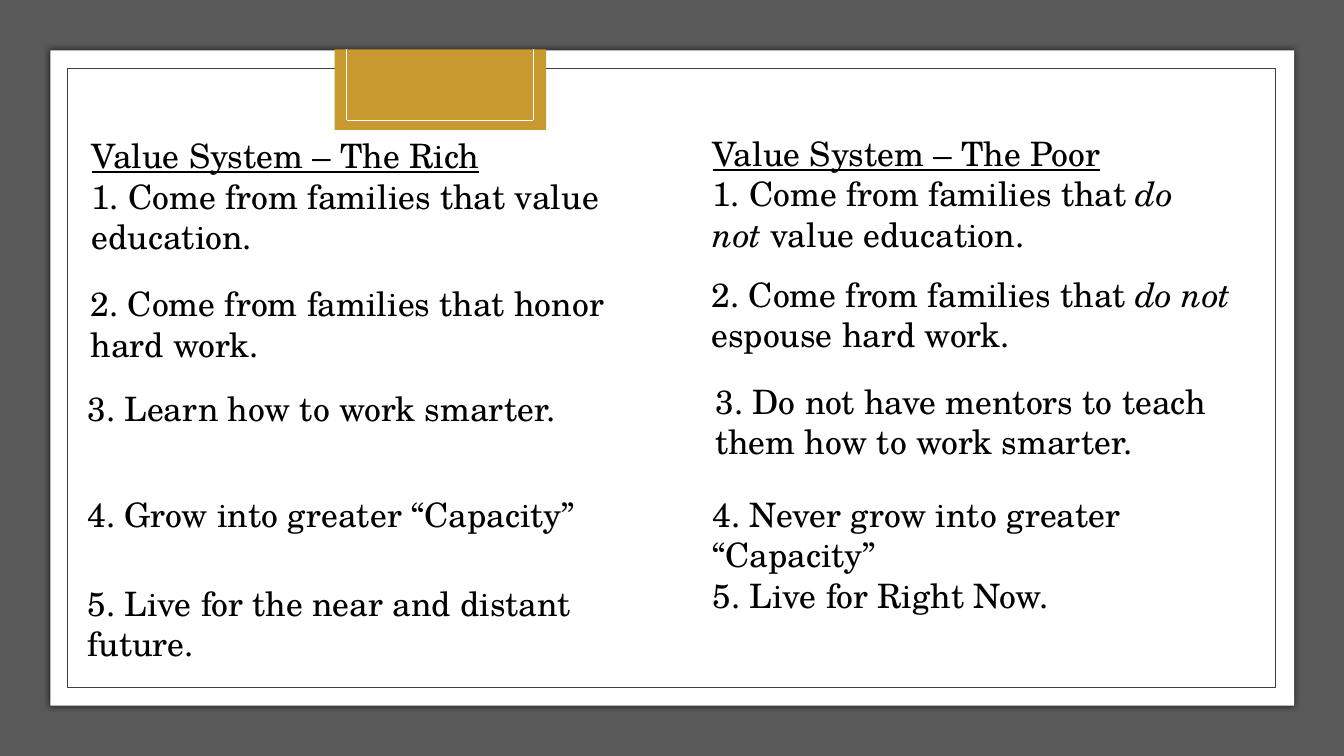
from dataclasses import dataclass

import lxml.etree
import pptx
import pptx.dml.color
import pptx.enum.shapes
import pptx.enum.text
import pptx.oxml
import pptx.oxml.ns
import pptx.slide
import pptx.text.text
import pptx.util

Pt = pptx.util.Pt


@dataclass(frozen=True)
class Theme:
    font: str = "TeX Gyre Schola"
    size: float = 24
    hairline: float = 0.5
    text: str = "000000"
    backdrop: str = "595959"
    paper: str = "FFFFFF"
    frame: str = "404040"
    tab: str = "C7992F"
    shadow: str = "000000"


@dataclass(frozen=True)
class Panel:
    left: float
    top: float
    width: float
    height: float
    fill: str
    line: str | None = None
    glow: bool = False


@dataclass(frozen=True)
class Note:
    left: float
    top: float
    height: float
    text: str
    width: float = 421.9
    heading: str | None = None


THEME = Theme()
TALL, MEDIUM, SHORT = 123.8, 94.3, 65.5

PANELS = [
    Panel(36, 36, 888.5, 468, THEME.paper, glow=True),
    Panel(48.2, 49, 862.6, 442.1, THEME.paper, line=THEME.frame),
    Panel(239, 35.3, 151.2, 57.6, THEME.tab),
]

TAB_LEFT, TAB_RIGHT, TAB_TOP, TAB_BOTTOM = 247.7, 380.9, 35.3, 85.7
TAB_LINES = [
    (TAB_LEFT, TAB_TOP, TAB_LEFT, TAB_BOTTOM),
    (TAB_RIGHT, TAB_TOP, TAB_RIGHT, TAB_BOTTOM),
    (TAB_LEFT, TAB_BOTTOM, TAB_RIGHT, TAB_BOTTOM),
]

OPENINGS = [
    Note(58.3, 92.9, TALL, "1. Come from families that value education.",
         heading="Value System – The Rich"),
    Note(501.8, 91.4, TALL, "1. Come from families that *do not *value education.",
         width=372.2, heading="Value System – The Poor"),
]

NOTES = [
    Note(57.6, 198.7, MEDIUM, "2. Come from families that honor hard work."),
    Note(501.1, 192.2, MEDIUM, "2. Come from families that *do not *espouse hard work."),
    Note(55.4, 273.6, SHORT, "3. Learn how to work smarter."),
    Note(504, 268.6, MEDIUM, "3. Do not have mentors to teach them how to work smarter."),
    Note(55.4, 349.2, SHORT, "4. Grow into greater “Capacity”"),
    Note(501.8, 349.2, SHORT, "4. Never grow into greater “Capacity”"),
    Note(55.4, 412.6, SHORT, "5. Live for the near and distant future."),
    Note(501.8, 406.8, SHORT, "5. Live for Right Now."),
]


def rgb(value: str) -> pptx.dml.color.RGBColor:
    return pptx.dml.color.RGBColor.from_string(value)


def add_glow(sp) -> None:
    ns = pptx.oxml.ns.nsdecls("a")
    effects = pptx.oxml.parse_xml(
        f'<a:effectLst {ns}><a:outerShdw blurRad="{Pt(4)}" dist="0" dir="0">'
        f'<a:srgbClr val="{THEME.shadow}"><a:alpha val="66000"/></a:srgbClr>'
        f'</a:outerShdw></a:effectLst>')
    sp.element.spPr.append(effects)


def add_panel(s: pptx.slide.Slide, panel: Panel) -> None:
    sp = s.shapes.add_shape(
        pptx.enum.shapes.MSO_SHAPE.RECTANGLE,
        Pt(panel.left), Pt(panel.top), Pt(panel.width), Pt(panel.height))
    sp.fill.solid()
    sp.fill.fore_color.rgb = rgb(panel.fill)
    if panel.line:
        sp.line.color.rgb = rgb(panel.line)
        sp.line.width = Pt(THEME.hairline)
    else:
        sp.line.fill.background()
    if panel.glow:
        add_glow(sp)
    else:
        sp.shadow.inherit = False


def add_tab_line(s: pptx.slide.Slide, ends: tuple[float, ...]) -> None:
    line = s.shapes.add_connector(
        pptx.enum.shapes.MSO_CONNECTOR.STRAIGHT, *(Pt(end) for end in ends))
    line.line.color.rgb = rgb(THEME.paper)
    line.line.width = Pt(THEME.hairline)
    lxml.etree.SubElement(line.element.spPr, pptx.oxml.ns.qn("a:effectLst"))


def write_paragraph(p: pptx.text.text._Paragraph, text: str, underline: bool) -> None:
    p.space_before = Pt(0)
    for i, piece in enumerate(text.split("*")):
        r = p.add_run()
        r.text = piece
        r.font.name = THEME.font
        r.font.size = Pt(THEME.size)
        r.font.color.rgb = rgb(THEME.text)
        r.font.italic = i % 2 == 1
        r.font.underline = underline


def fill_note(sp, note: Note) -> None:
    sp.left, sp.top = Pt(note.left), Pt(note.top)
    sp.width, sp.height = Pt(note.width), Pt(note.height)
    tf = sp.text_frame
    tf.word_wrap = True
    tf.auto_size = pptx.enum.text.MSO_AUTO_SIZE.NONE
    tf.vertical_anchor = pptx.enum.text.MSO_ANCHOR.TOP
    p = tf.paragraphs[0]
    if note.heading:
        write_paragraph(p, note.heading, True)
        p = tf.add_paragraph()
    write_paragraph(p, note.text, False)


def fill_opening(sp, note: Note) -> None:
    fill_note(sp, note)
    for p in sp.text_frame.paragraphs:
        pPr = p._p.get_or_add_pPr()
        pPr.set("marL", "0")
        pPr.set("indent", "0")
        lxml.etree.SubElement(pPr, pptx.oxml.ns.qn("a:buNone"))
    sp.element.getparent().append(sp.element)


def main() -> None:
    prs = pptx.Presentation()
    prs.slide_width, prs.slide_height = Pt(960), Pt(540)
    s = prs.slides.add_slide(prs.slide_layouts.get_by_name("Two Content"))
    s.background.fill.solid()
    s.background.fill.fore_color.rgb = rgb(THEME.backdrop)
    title, *bodies = s.placeholders
    title.element.getparent().remove(title.element)

    for panel in PANELS:
        add_panel(s, panel)
    for ends in TAB_LINES:
        add_tab_line(s, ends)
    for sp, note in zip(bodies, OPENINGS):
        fill_opening(sp, note)
    for note in NOTES:
        fill_note(s.shapes.add_textbox(0, 0, 0, 0), note)

    prs.save("out.pptx")


if __name__ == "__main__":
    main()
